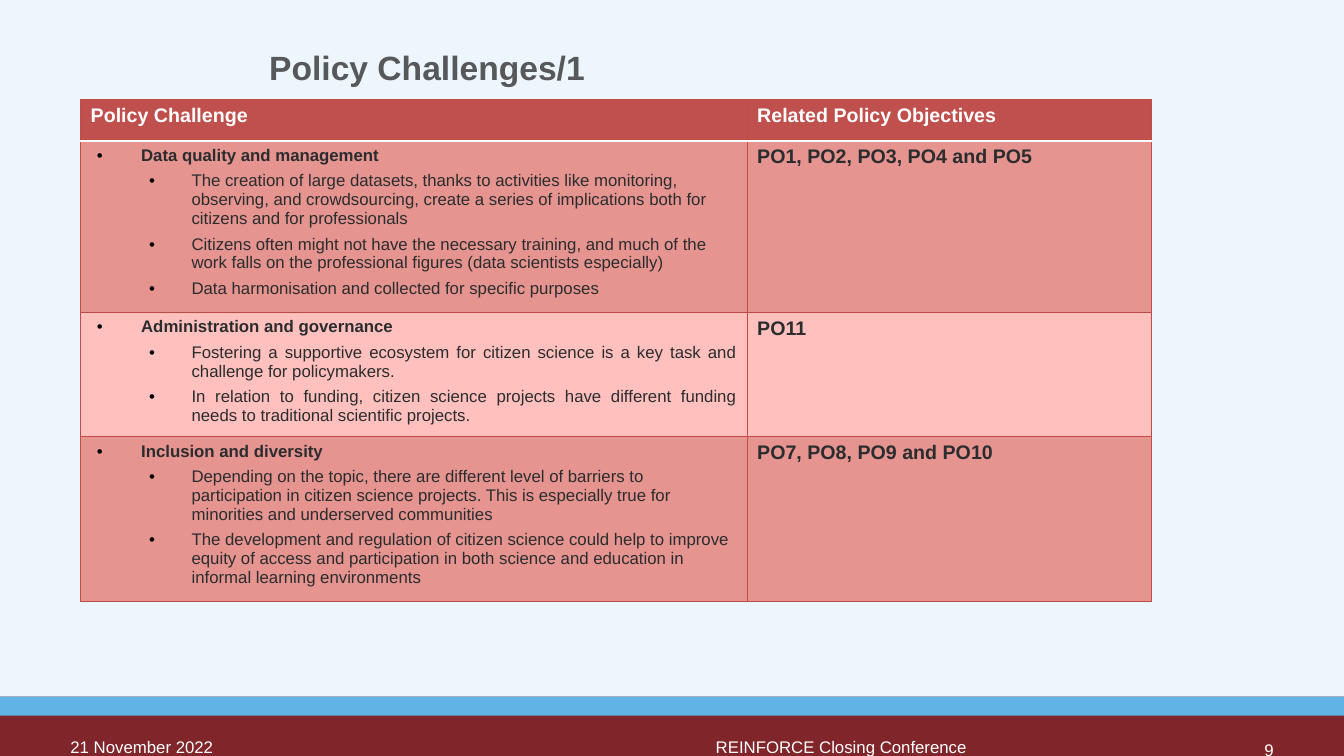
from lxml import etree
from pptx import Presentation
from pptx.dml.color import RGBColor
from pptx.enum.shapes import MSO_SHAPE
from pptx.enum.text import MSO_ANCHOR, PP_ALIGN
from pptx.oxml.ns import qn
from pptx.util import Inches, Pt

RECT = MSO_SHAPE.RECTANGLE
MIDDLE = MSO_ANCHOR.MIDDLE
LEFT, RIGHT, JUSTIFY = PP_ALIGN.LEFT, PP_ALIGN.RIGHT, PP_ALIGN.JUSTIFY

PALE = RGBColor(0xEC, 0xF6, 0xFC)
MAROON = RGBColor(0x80, 0x25, 0x2A)
BLUE = RGBColor(0x61, 0xB3, 0xE5)
GREY = RGBColor(0x56, 0x58, 0x5A)
INK = RGBColor(0x2B, 0x2C, 0x2D)
BLACK = RGBColor(0, 0, 0)
WHITE = RGBColor(0xFF, 0xFF, 0xFF)
RED = RGBColor(0xC0, 0x50, 0x4D)
EDGE = RGBColor(0xBF, 0x4C, 0x48)
ROSE = RGBColor(0xE5, 0x94, 0x90)
PINK = RGBColor(0xFF, 0xC0, 0xBE)

HEADS = ["Policy Challenge", "Related Policy Objectives"]
# topic, points, objectives, alignment, fill, row height
TOPICS = [
    ("Data quality and management",
     ["The creation of large datasets, thanks to activities like monitoring, "
      "observing, and crowdsourcing, create a series of implications both for "
      "citizens and for professionals",
      "Citizens often might not have the necessary training, and much of the "
      "work falls on the professional figures (data scientists especially)",
      "Data harmonisation and collected for specific purposes"],
     "PO1, PO2, PO3, PO4 and PO5", LEFT, ROSE, 1.6),
    ("Administration and governance",
     ["Fostering a supportive ecosystem for citizen science is a key task and "
      "challenge for policymakers.",
      "In relation to funding, citizen science projects have different funding "
      "needs to traditional scientific projects."],
     "PO11", JUSTIFY, PINK, 1.17),
    ("Inclusion and diversity",
     ["Depending on the topic, there are different level of barriers to "
      "participation in citizen science projects. This is especially true for "
      "minorities and underserved communities",
      "The development and regulation of citizen science could help to improve "
      "equity of access and participation in both science and education in "
      "informal learning environments"],
     "PO7, PO8, PO9 and PO10", LEFT, ROSE, 1.54),
]


def write(para, text, size=12, color=INK, bold=False, align=LEFT):
    para.text = text
    para.alignment = align
    font = para.font
    font.name, font.size, font.bold = "Arial", Pt(size), bold
    font.color.rgb = color


def add_bullet(para, left, hang):
    props = para._p.get_or_add_pPr()
    props.set("marL", str(Inches(left)))
    props.set("indent", str(-Inches(hang)))
    tint = etree.SubElement(props, qn("a:buClr"))
    etree.SubElement(tint, qn("a:srgbClr"), val=str(BLACK))
    etree.SubElement(props, qn("a:buFont"), typeface="Arial")
    etree.SubElement(props, qn("a:buChar"), char="•")


def add_edge(cell, side, color=EDGE, width=0.75):
    line = etree.SubElement(cell._tc.get_or_add_tcPr(), qn("a:ln" + side),
                            w=str(Pt(width)))
    fill = etree.SubElement(line, qn("a:solidFill"))
    etree.SubElement(fill, qn("a:srgbClr"), val=str(color))


def style_cell(cell, fill, top=(), base=()):
    """Set borders before the fill, as the schema orders them."""
    for side, look in (("L", ()), ("R", ()), ("T", top), ("B", base)):
        add_edge(cell, side, *look)
    cell.fill.solid()
    cell.fill.fore_color.rgb = fill


def fill_topic(frame, topic, points, align):
    head = frame.paragraphs[0]
    add_bullet(head, 0.5, 0.44)
    write(head, topic, bold=True, align=align)
    for point in points:
        para = frame.add_paragraph()
        para.level = 1
        add_bullet(para, 1, 0.42)
        write(para, point, align=align)
        para.space_before = Pt(4.8)


def add_grid(slide, left, top, width, height):
    grid = slide.shapes.add_table(len(TOPICS) + 1, 2, Inches(left), Inches(top),
                                  Inches(width), Inches(height)).table
    grid.horz_banding = False
    grid.columns[0].width = Inches(6.61)
    grid.columns[1].width = Inches(width - 6.61)
    grid.rows[0].height = Inches(0.41)
    rule = (WHITE, 2)
    for col, head in enumerate(HEADS):
        cell = grid.cell(0, col)
        style_cell(cell, RED, base=rule)
        write(cell.text_frame.paragraphs[0], head, 14, WHITE, True)
    for row, (topic, points, goals, align, fill, tall) in enumerate(TOPICS, 1):
        grid.rows[row].height = Inches(tall)
        for col in range(2):
            style_cell(grid.cell(row, col), fill, top=rule if row == 1 else ())
        fill_topic(grid.cell(row, 0).text_frame, topic, points, align)
        write(grid.cell(row, 1).text_frame.paragraphs[0], goals, 14, bold=True)


def add_title(slide, left, top, width, height):
    title = slide.shapes.title
    title.left, title.top = Inches(left), Inches(top)
    title.width, title.height = Inches(width), Inches(height)
    title.text_frame.vertical_anchor = MIDDLE
    write(title.text_frame.paragraphs[0], "Policy Challenges/1", 24, GREY, True)


def add_footer(slide, left, top, width, height):
    for color, tall in ((MAROON, height), (BLUE, 0.19)):
        band = slide.shapes.add_shape(RECT, Inches(left), Inches(top),
                                      Inches(width), Inches(tall))
        band.shadow.inherit = False
        band.fill.solid()
        band.fill.fore_color.rgb = color
        band.line.fill.background()
    for text, x, y, align in (
            ("21 November 2022", 0.6, 0.35, LEFT),
            ("REINFORCE Closing Conference", 7, 0.35, LEFT),
            ("9", 9.62, 0.38, RIGHT)):
        box = slide.shapes.add_textbox(Inches(left + x), Inches(top + y),
                                       Inches(3.11), Inches(0.4))
        box.text_frame.word_wrap = True
        write(box.text_frame.paragraphs[0], text, color=WHITE, align=align)


def main():
    deck = Presentation()
    deck.slide_width, deck.slide_height = Inches(13.33), Inches(7.5)
    slide = deck.slides.add_slide(deck.slide_layouts[5])
    slide.background.fill.solid()
    slide.background.fill.fore_color.rgb = PALE
    add_footer(slide, 0, 6.91, 13.33, 0.59)
    add_title(slide, 2.57, 0.04, 10.16, 1.25)
    add_grid(slide, 0.8, 0.99, 10.62, 4.72)
    deck.save("out.pptx")


if __name__ == "__main__":
    main()
